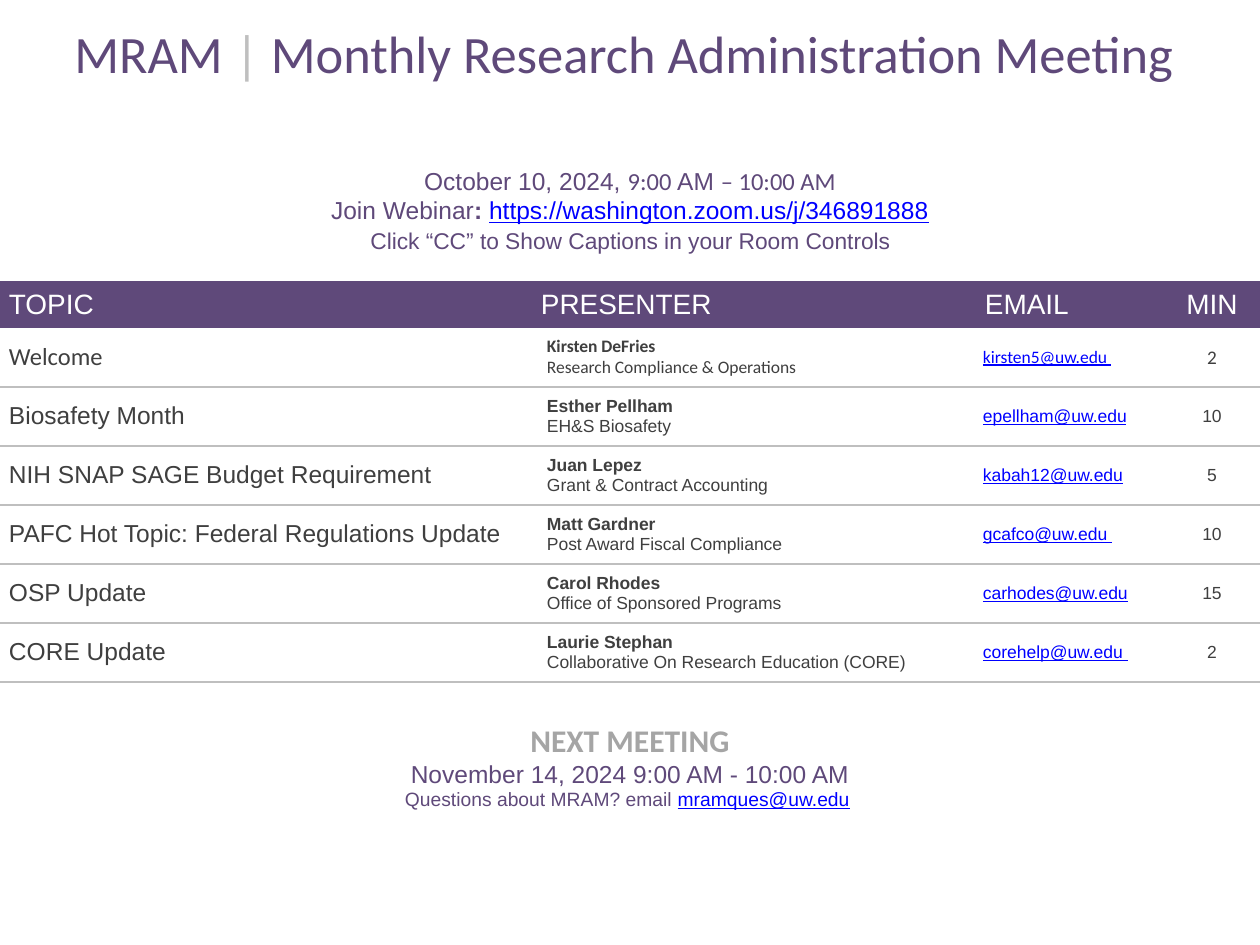
import pptx
import pptx.util
import pptx.dml.color
import pptx.enum.text
import pptx.oxml
import pptx.oxml.ns

SCALE = 914400 / 126
COLORS = {"purple": "5F497A", "rule": "BFBFBF", "gray": "A5A5A5", "ink": "3F3F3F",
          "link": "0000FF", "white": "FFFFFF"}
ANCHOR = pptx.enum.text.MSO_ANCHOR
CENTER = pptx.enum.text.PP_ALIGN.CENTER
LEFT = pptx.enum.text.PP_ALIGN.LEFT


def px(length):
    return pptx.util.Emu(round(length * SCALE))


def write(cell, text, size=14, color="purple", font="Arial", bold=False,
          underline=False, align=CENTER, joined=False, spacing=None):
    frame = cell.text_frame
    paragraph = frame.paragraphs[-1]
    if paragraph.runs and not joined:
        paragraph = frame.add_paragraph()
    paragraph.alignment = align
    if spacing:
        paragraph.line_spacing = spacing
    run = paragraph.add_run()
    run.text = text
    run.font.size = pptx.util.Pt(size)
    run.font.name = font
    run.font.bold = bold
    run.font.underline = underline
    run.font.color.rgb = pptx.dml.color.RGBColor.from_string(COLORS[color])


topics = [
    ("Welcome", "Kirsten DeFries", "Research Compliance & Operations", "kirsten5@uw.edu ", "2"),
    ("Biosafety Month", "Esther Pellham", "EH&S Biosafety", "epellham@uw.edu", "10"),
    ("NIH SNAP SAGE Budget Requirement", "Juan Lepez", "Grant & Contract Accounting",
     "kabah12@uw.edu", "5"),
    ("PAFC Hot Topic: Federal Regulations Update", "Matt Gardner",
     "Post Award Fiscal Compliance", "gcafco@uw.edu ", "10"),
    ("OSP Update", "Carol Rhodes", "Office of Sponsored Programs", "carhodes@uw.edu", "15"),
    ("CORE Update", "Laurie Stephan", "Collaborative On Research Education (CORE)",
     "corehelp@uw.edu ", "2"),
]
column_widths = [532, 436, 196, 96]
row_heights = [88, 193, 47] + [59] * len(topics) + [197]
first_topic = 3
closing_row = first_topic + len(topics)

deck = pptx.Presentation()
deck.slide_width, deck.slide_height = px(1260), px(945)
slide = deck.slides.add_slide(deck.slide_layouts[6])

agenda = slide.shapes.add_table(len(row_heights), len(column_widths), 0, 0,
                                px(sum(column_widths)), px(sum(row_heights))).table
agenda.first_row = False
agenda.horz_banding = False
style = agenda._tbl.tblPr.find(pptx.oxml.ns.qn("a:tableStyleId"))
style.text = "{2D5ABB26-0587-4C30-8999-92F81FD0307C}"
for column, width in zip(agenda.columns, column_widths):
    column.width = px(width)
for row, height in zip(agenda.rows, row_heights):
    row.height = px(height)

for row_index, row in enumerate(agenda.rows):
    for cell in row.cells:
        edges = []
        if first_topic < row_index <= closing_row:
            edges.append("lnT")
        if first_topic <= row_index < closing_row:
            edges.append("lnB")
        for edge in edges:
            cell._tc.get_or_add_tcPr().append(pptx.oxml.parse_xml(
                f'<a:{edge} {pptx.oxml.ns.nsdecls("a")} w="12700"><a:solidFill>'
                f'<a:srgbClr val="{COLORS["rule"]}"/></a:solidFill></a:{edge}>'))
        cell.fill.solid()
        cell.fill.fore_color.rgb = pptx.dml.color.RGBColor.from_string(
            COLORS["purple" if row_index == 2 else "white"])
        cell.margin_left = cell.margin_right = px(9)
        cell.margin_top = cell.margin_bottom = 0
        cell.vertical_anchor = ANCHOR.MIDDLE

for row_index in (0, 1, closing_row):
    agenda.cell(row_index, 0).merge(agenda.cell(row_index, 3))

heading = agenda.cell(0, 0)
heading.vertical_anchor = ANCHOR.BOTTOM
write(heading, "MRAM ", size=30, font="Calibri")
write(heading, "|", size=30, font="Calibri", color="rule", joined=True)
write(heading, " Monthly Research Administration Meeting ", size=30, font="Calibri", joined=True)

session = agenda.cell(1, 0)
session.vertical_anchor = ANCHOR.BOTTOM
session.margin_bottom = px(27)
write(session, "October 10, 2024, ")
write(session, "9:00 ", font="Calibri", joined=True)
write(session, "AM ", joined=True)
write(session, "– 10:00 AM", font="Calibri", joined=True)
write(session, "Join Webinar")
write(session, ": ", bold=True, joined=True)
write(session, "https://washington.zoom.us/j/346891888", color="link", underline=True, joined=True)
write(session, "Click “CC” to Show Captions in your Room Controls", size=13, spacing=1.15)

for column_index, label in enumerate(["TOPIC", "PRESENTER", "EMAIL", "MIN"]):
    write(agenda.cell(2, column_index), label, size=16, color="white",
          align=CENTER if label == "MIN" else LEFT)
agenda.cell(2, 2).margin_left = px(17)

for row_index, (topic, presenter, office, email, minutes) in enumerate(topics, first_topic):
    opening = row_index == first_topic
    font = "Calibri" if opening else "Arial"
    topic_cell, presenter_cell, email_cell, minutes_cell = agenda.rows[row_index].cells
    presenter_cell.margin_left = presenter_cell.margin_right = px(15)
    email_cell.margin_left = email_cell.margin_right = px(15)
    write(topic_cell, topic, color="ink", font=font, align=LEFT)
    write(presenter_cell, presenter, size=10, color="ink", font=font, bold=True, align=LEFT)
    write(presenter_cell, office, size=10, color="ink", font=font, align=LEFT)
    write(email_cell, email, size=10, color="link", font=font, underline=True, align=LEFT)
    write(minutes_cell, minutes, size=11 if opening else 10, color="ink", font=font)

closing = agenda.cell(closing_row, 0)
closing.margin_bottom = px(28)
write(closing, "NEXT MEETING", size=18, color="gray", font="Calibri", bold=True)
write(closing, "November 14, 2024 9:00 AM - 10:00 AM")
write(closing, "Questions about MRAM? email ", size=11)
write(closing, "mramques@uw.edu", size=11, color="link", underline=True, joined=True)
write(closing, " ", size=11, joined=True)

deck.save("out.pptx")
